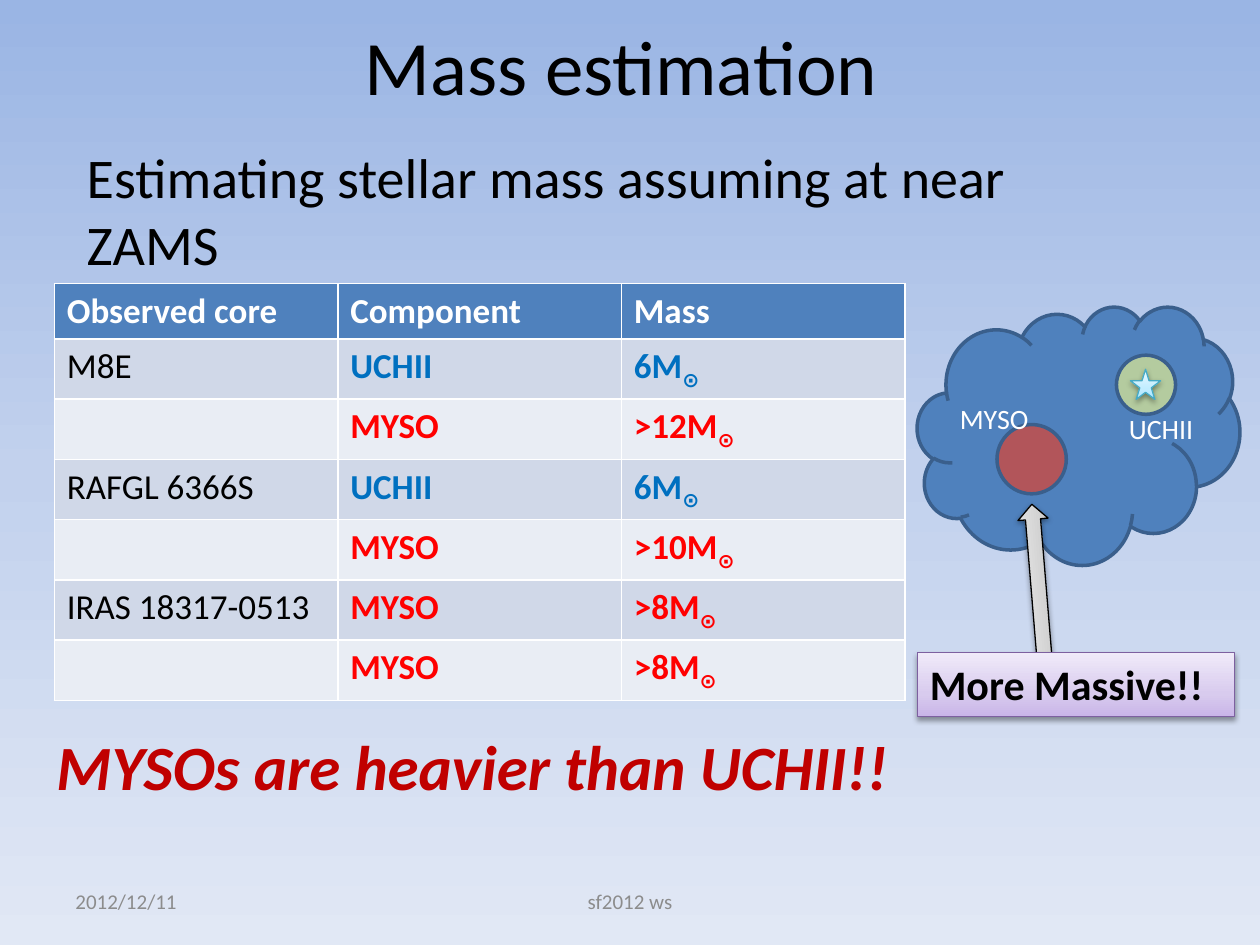
from dataclasses import dataclass
from typing import Optional

from lxml.etree import SubElement
from pptx import Presentation
from pptx.dml.color import RGBColor
from pptx.enum.shapes import MSO_SHAPE
from pptx.enum.text import MSO_ANCHOR, PP_ALIGN
from pptx.oxml.ns import qn
from pptx.util import Pt


@dataclass(frozen=True)
class Theme:
    font: str = "Calibri"
    black: str = "000000"
    white: str = "FFFFFF"
    grey: str = "8C8C8C"
    blue: str = "4F81BD"
    outline: str = "3A5F8C"
    bands: tuple = ("D0D8E8", "E9EDF4")
    uchii: str = "0070C0"
    myso: str = "FF0000"
    conclusion: str = "C00000"
    sky: tuple = ((0, "9AB5E4"), (50, "C2D1ED"), (100, "E1E8F5"))
    star: tuple = ((0, "A7E6FF"), (35, "C1EDFF"), (100, "E7F8FF"))
    arrow: tuple = ((0, "BDBDBD"), (35, "D1D1D1"), (100, "EEEEEE"))
    callout: tuple = ((0, "C9B5E8"), (35, "D8CBEE"), (100, "F0EAF9"))
    title_size: int = 44
    intro_size: int = 32
    conclusion_size: int = 36
    callout_size: int = 24
    table_size: int = 20
    label_size: int = 16
    footer_size: int = 12


THEME = Theme()


@dataclass(frozen=True)
class Label:
    text: str
    box: tuple
    size: int
    color: str
    bold: bool = False
    italic: bool = False
    align: PP_ALIGN = PP_ALIGN.LEFT
    anchor: MSO_ANCHOR = MSO_ANCHOR.TOP


@dataclass(frozen=True)
class Figure:
    kind: MSO_SHAPE
    box: tuple
    line: str
    fill: Optional[str] = None
    gradient: tuple = ()
    opacity: int = 100
    rotation: float = 0


@dataclass(frozen=True)
class Core:
    name: str
    component: str
    mass: str


def points(box: tuple) -> list:
    return [Pt(length) for length in box]


def style(paragraph, size: int, color: str, bold=False, italic=False) -> None:
    font = paragraph.font
    font.name, font.size = THEME.font, Pt(size)
    font.bold, font.italic = bold, italic
    font.color.rgb = RGBColor.from_string(color)


def write(frame, label: Label) -> None:
    frame.word_wrap = True
    frame.vertical_anchor = label.anchor
    paragraph = frame.paragraphs[0]
    paragraph.text = label.text
    paragraph.alignment = label.align
    style(paragraph, label.size, label.color, label.bold, label.italic)


def add_label(shapes, label: Label) -> None:
    write(shapes.add_textbox(*points(label.box)).text_frame, label)


def set_gradient(fill, element, stops: tuple, angle: int) -> None:
    fill.gradient()
    fill.gradient_angle = angle
    stop_list = element.find(".//" + qn("a:gsLst"))
    for old in list(stop_list):
        stop_list.remove(old)
    for position, color in stops:
        stop = SubElement(stop_list, qn("a:gs"), pos=str(position * 1000))
        SubElement(stop, qn("a:srgbClr"), val=color)


def add_shadow(shape) -> None:
    effects = shape.element.spPr.find(qn("a:effectLst"))
    shadow = SubElement(effects, qn("a:outerShdw"), blurRad=str(Pt(3.1)),
                        dist=str(Pt(1.6)), dir="5400000", rotWithShape="0")
    color = SubElement(shadow, qn("a:srgbClr"), val=THEME.black)
    SubElement(color, qn("a:alpha"), val="38000")


def add_figure(shapes, figure: Figure):
    shape = shapes.add_shape(figure.kind, *points(figure.box))
    shape.rotation = figure.rotation
    shape.shadow.inherit = False
    if figure.gradient:
        set_gradient(shape.fill, shape.element, figure.gradient, 90)
        add_shadow(shape)
    else:
        shape.fill.solid()
        shape.fill.fore_color.rgb = RGBColor.from_string(figure.fill)
        color = shape.element.spPr.find(qn("a:solidFill"))[0]
        SubElement(color, qn("a:alpha"), val=str(figure.opacity * 1000))
    shape.line.color.rgb = RGBColor.from_string(figure.line)
    shape.line.width = Pt(0.75 if figure.gradient else 2)
    return shape


def fill_cell(cell, text: str, fill: str, color: str, bold: bool):
    cell.fill.solid()
    cell.fill.fore_color.rgb = RGBColor.from_string(fill)
    paragraph = cell.text_frame.paragraphs[0]
    if text:
        paragraph.add_run().text = text
    style(paragraph, THEME.table_size, color, bold)
    return paragraph


def add_mass_table(shapes, headings: tuple, cores: tuple) -> None:
    rows = len(cores) + 1
    table = shapes.add_table(rows, len(headings), *points((31, 162, 486, 29.2 * rows))).table
    for column, heading in enumerate(headings):
        fill_cell(table.cell(0, column), heading, THEME.blue, THEME.white, True)
    for row, core in enumerate(cores, start=1):
        band = THEME.bands[(row - 1) % 2]
        color = THEME.uchii if core.component == "UCHII" else THEME.myso
        fill_cell(table.cell(row, 0), core.name, band, THEME.black, False)
        fill_cell(table.cell(row, 1), core.component, band, color, True)
        mass = fill_cell(table.cell(row, 2), core.mass, band, color, True)
        # Solar symbol as a subscript
        sun = mass.add_run()
        sun.text = "⊙"
        sun.font._element.set("baseline", "-25000")


HEADINGS = ("Observed core", "Component", "Mass")
CORES = (
    Core("M8E", "UCHII", "6M"),
    Core("", "MYSO", ">12M"),
    Core("RAFGL 6366S", "UCHII", "6M"),
    Core("", "MYSO", ">10M"),
    Core("IRAS 18317-0513", "MYSO", ">8M"),
    Core("", "MYSO", ">8M"),
)
FOOTERS = (
    Label("2012/12/11", (36, 500.5, 168, 28.8), THEME.footer_size, THEME.grey,
          anchor=MSO_ANCHOR.MIDDLE),
    Label("sf2012 ws", (246, 500.5, 228, 28.8), THEME.footer_size, THEME.grey,
          align=PP_ALIGN.CENTER, anchor=MSO_ANCHOR.MIDDLE),
)
CLOUD_SCENE = (
    Figure(MSO_SHAPE.CLOUD, (524.2, 175, 184.3, 147.6), THEME.outline, THEME.blue),
    Figure(MSO_SHAPE.OVAL, (638, 203, 33.8, 33.8), THEME.outline, "C3D69B", opacity=88),
    Figure(MSO_SHAPE.OVAL, (569.7, 242.6, 39.6, 39.6), THEME.outline, "C0504D", opacity=88),
    Figure(MSO_SHAPE.STAR_5_POINT, (646, 211, 17.3, 17.3), "46AAC5", gradient=THEME.star),
    Figure(MSO_SHAPE.RIGHT_ARROW, (548, 324.7, 90.7, 17.3), THEME.black,
           gradient=THEME.arrow, rotation=265.3),
)
CALLOUT_BOX = (524.2, 373, 181.4, 36.3)
CALLOUT = Label("More Massive!!", CALLOUT_BOX, THEME.callout_size, THEME.black, bold=True)
LABELS = (
    Label("MYSO", (541.4, 226, 57, 26.6), THEME.label_size, THEME.white),
    Label("UCHII", (638, 231.4, 57, 26.6), THEME.label_size, THEME.white),
    Label("Estimating stellar mass assuming at near ZAMS", (42.5, 78, 584, 85),
          THEME.intro_size, THEME.black),
    Label("MYSOs are heavier than UCHII!!", (25.2, 412, 584, 51),
          THEME.conclusion_size, THEME.conclusion, bold=True, italic=True),
)
TITLE = Label("Mass estimation ", (36, -8, 648, 90), THEME.title_size, THEME.black,
              align=PP_ALIGN.CENTER, anchor=MSO_ANCHOR.MIDDLE)


def main() -> None:
    deck = Presentation()
    deck.slide_width, deck.slide_height = Pt(720), Pt(540)
    slide = deck.slides.add_slide(deck.slide_layouts[5])
    shapes = slide.shapes
    set_gradient(slide.background.fill, slide.element, THEME.sky, 270)

    # Title
    title = shapes.title
    title.left, title.top, title.width, title.height = points(TITLE.box)
    write(title.text_frame, TITLE)

    # Table and footers
    add_mass_table(shapes, HEADINGS, CORES)
    for footer in FOOTERS:
        add_label(shapes, footer)

    # Cloud with its two sources, and the callout
    for figure in CLOUD_SCENE:
        add_figure(shapes, figure)
    callout = add_figure(shapes, Figure(MSO_SHAPE.RECTANGLE, CALLOUT_BOX, "7D60A0",
                                        gradient=THEME.callout))
    write(callout.text_frame, CALLOUT)

    # Source names, introduction and conclusion
    for label in LABELS:
        add_label(shapes, label)
    deck.save("out.pptx")


if __name__ == "__main__":
    main()
